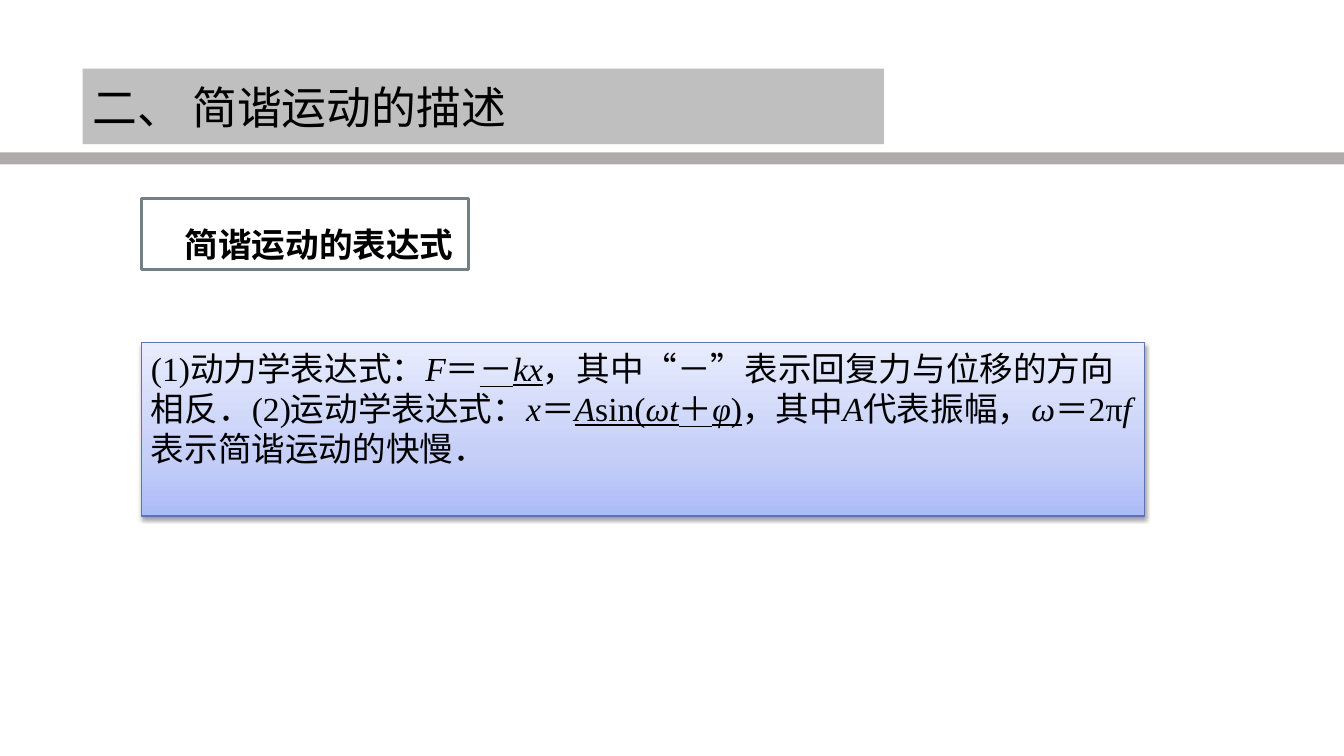
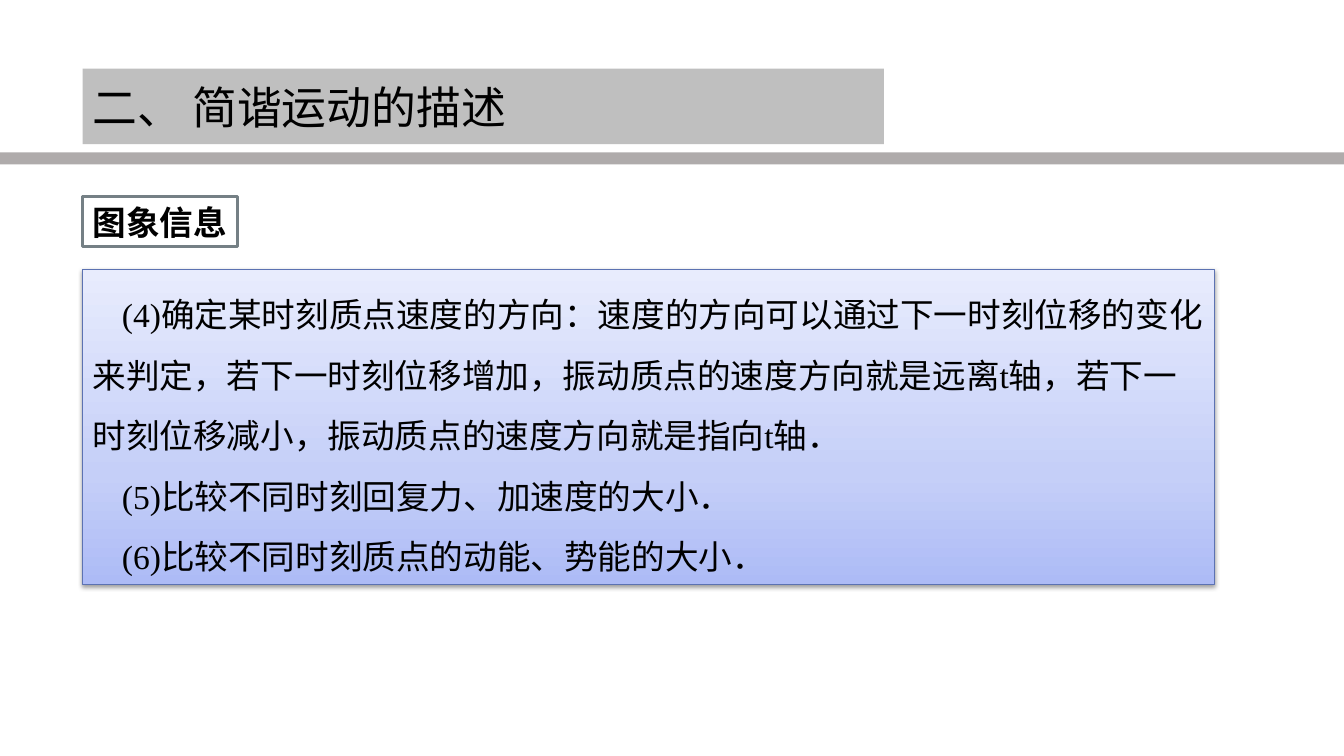
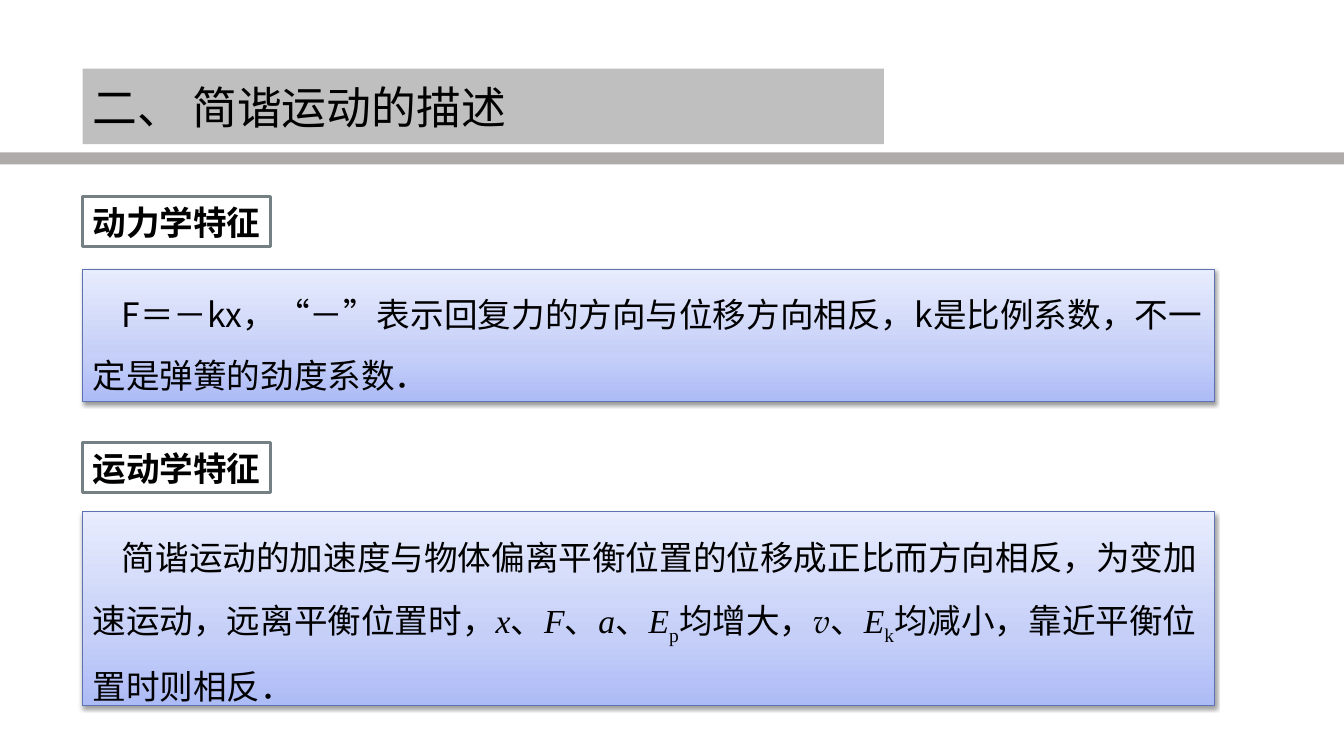
"""Build three slides on the description of simple harmonic motion."""
from dataclasses import dataclass

from pptx import Presentation
from pptx.dml.color import RGBColor
from pptx.enum.shapes import MSO_SHAPE as SHAPE
from pptx.enum.text import MSO_ANCHOR as ANCHOR, MSO_AUTO_SIZE as AUTO, PP_ALIGN as ALIGN
from pptx.oxml import parse_xml
from pptx.oxml.ns import nsdecls, qn
from pptx.util import Pt


@dataclass(frozen=True)
class Theme:
    ink: str = "000000"
    band: str = "AFABAB"
    title_fill: str = "BFBFBF"
    label_fill: str = "FFFFFF"
    label_line: str = "758085"
    panel_line: str = "5C72B2"
    panel_stops: tuple = ((0, "ADBBF6"), (35, "C5CFF8"), (100, "E8ECFD"))
    title_size: int = 32
    body_size: int = 24
    cjk: str = "Noto Sans CJK SC"
    heading: str = "Lato"
    sans: str = "Calibri"
    serif: str = "Times New Roman"
    script: str = "TeX Gyre Pagella"


T = Theme()
WIDTH, HEIGHT = 960, 540
LEFT, PANEL_WIDTH = 59, 808.6
LABEL_HEIGHT, INSET = 36, 7.2
TITLE = "二、 简谐运动的描述"
TITLE_AT = (LEFT, 49, 572.4, 54)
BAND_AT = (0, 108.8, WIDTH, 8.6)

EXPRESSIONS = [
    ("(1)动力学表达式：", ""), ("F", "i"), ("＝", ""), ("－", "u"), ("kx", "iu"),
    ("，其中“－”表示回复力与位移的方向相反．(2)运动学表达式：", ""),
    ("x", "i"), ("＝", ""), ("A", "iu"), ("sin(", "u"), ("ωt", "iu"), ("＋", "u"),
    ("φ", "iu"), (")", "u"), ("，其中", ""), ("A", "i"), ("代表振幅，", ""),
    ("ω", "i"), ("＝2π", ""), ("f", "i"), ("表示简谐运动的快慢．", ""),
]
GRAPH_FACTS = [
    "(4)确定某时刻质点速度的方向：速度的方向可以通过下一时刻位移的变化来判定，"
    "若下一时刻位移增加，振动质点的速度方向就是远离t轴，"
    "若下一时刻位移减小，振动质点的速度方向就是指向t轴．",
    "(5)比较不同时刻回复力、加速度的大小．",
    "(6)比较不同时刻质点的动能、势能的大小．",
]
DYNAMICS = "F＝－kx，“－”表示回复力的方向与位移方向相反，k是比例系数，不一定是弹簧的劲度系数．"
KINEMATICS = [
    ("简谐运动的加速度与物体偏离平衡位置的位移成正比而方向相反，为变加速运动，远离平衡位置时，", ""),
    ("x", "mi"), ("、", ""), ("F", "mi"), ("、", ""), ("a", "mi"), ("、", ""),
    ("E", "mi"), ("p", "ms"), ("均增大，", ""), ("v", "vi"), ("、", ""),
    ("E", "mi"), ("k", "ms"), ("均减小，靠近平衡位置时则相反．", ""),
]

SPACED = dict(indent=21, spacing=1.5)
SLIDES = [
    dict(
        labels=[dict(text="简谐运动的表达式", at=(100.8, 141.8, 234, 51), font=T.cjk,
                     indent=24, spacing=1.5, wrap=True)],
        panels=[dict(paras=[EXPRESSIONS], at=(100.8, 244.8, 717.1, 123.8), font=T.serif)],
    ),
    dict(
        labels=[dict(text="图象信息", top=140.4)],
        panels=[dict(paras=GRAPH_FACTS, at=(LEFT, 192.2, PANEL_WIDTH, 225.4),
                     font=T.serif, **SPACED)],
    ),
    dict(
        labels=[dict(text="动力学特征", top=140.4), dict(text="运动学特征", top=316.1)],
        panels=[
            dict(paras=[DYNAMICS], at=(LEFT, 192.2, PANEL_WIDTH, 94.6), font=T.cjk, **SPACED),
            dict(paras=[KINEMATICS], at=(LEFT, 365.6, PANEL_WIDTH, 138.2), font=T.sans, **SPACED),
        ],
    ),
]


def rgb(color):
    return RGBColor.from_string(color)


def place(sp, at):
    sp.left, sp.top, sp.width, sp.height = map(Pt, at)


def write(sp, paras, *, font, size=T.body_size, bold=False, indent=0, spacing=None,
          wrap=True, anchor=ANCHOR.TOP):
    tf = sp.text_frame
    tf.auto_size, tf.word_wrap, tf.vertical_anchor = AUTO.NONE, wrap, anchor
    faces = {"m": T.serif, "v": T.script}
    for i, para in enumerate(paras):
        p = tf.add_paragraph() if i else tf.paragraphs[0]
        p.alignment = ALIGN.LEFT
        if spacing:
            p.line_spacing = spacing
        if indent:
            p._p.get_or_add_pPr().set("indent", str(Pt(indent)))
        for text, marks in [(para, "")] if isinstance(para, str) else para:
            r = p.add_run()
            r.text = text
            f = r.font
            f.size, f.bold, f.italic, f.underline = Pt(size), bold, "i" in marks, "u" in marks
            f.color.rgb = rgb(T.ink)
            f.name = next((faces[m] for m in marks if m in faces), font)
            rpr = r._r.get_or_add_rPr()
            rpr.find(qn("a:latin")).addnext(
                parse_xml(f'<a:ea {nsdecls("a")} typeface="{T.cjk}"/>'))
            if "s" in marks:
                rpr.set("baseline", "-25000")


def add_box(s, at, fill, line=None, weight=0):
    sp = s.shapes.add_shape(SHAPE.RECTANGLE, *map(Pt, at))
    sp.shadow.inherit = False
    sp.fill.solid()
    sp.fill.fore_color.rgb = rgb(fill)
    if line:
        sp.line.color.rgb = rgb(line)
        sp.line.width = Pt(weight)
    else:
        sp.line.fill.background()
    return sp


def add_label(s, text, at=None, top=0, font=T.sans, wrap=False, **fmt):
    at = at or (LEFT, top, len(text) * T.body_size + 2 * INSET, LABEL_HEIGHT)
    sp = add_box(s, at, T.label_fill, T.label_line, 2)
    write(sp, [text], font=font, bold=True, wrap=wrap, **fmt)


def add_panel(s, paras, at, **fmt):
    sp = add_box(s, at, T.label_fill, T.panel_line, 0.75)
    stops = "".join(f'<a:gs pos="{pos * 1000}"><a:srgbClr val="{color}"/></a:gs>'
                    for pos, color in T.panel_stops)
    pr = sp._element.spPr
    pr.replace(pr.find(qn("a:solidFill")), parse_xml(
        f'<a:gradFill {nsdecls("a")} rotWithShape="1"><a:gsLst>{stops}</a:gsLst>'
        '<a:lin ang="16200000" scaled="0"/></a:gradFill>'))
    pr.find(qn("a:effectLst")).append(parse_xml(
        f'<a:outerShdw {nsdecls("a")} blurRad="{Pt(3.1)}" dist="{Pt(1.6)}" dir="5400000" '
        f'rotWithShape="0"><a:srgbClr val="{T.ink}"><a:alpha val="38000"/></a:srgbClr>'
        '</a:outerShdw>'))
    write(sp, paras, **fmt)


def add_slide(prs):
    s = prs.slides.add_slide(prs.slide_layouts[5])
    add_box(s, BAND_AT, T.band)
    title = s.shapes.title
    place(title, TITLE_AT)
    title.fill.solid()
    title.fill.fore_color.rgb = rgb(T.title_fill)
    write(title, [TITLE], font=T.heading, size=T.title_size, anchor=ANCHOR.MIDDLE)
    return s


def main():
    prs = Presentation()
    prs.slide_width, prs.slide_height = Pt(WIDTH), Pt(HEIGHT)
    for content in SLIDES:
        s = add_slide(prs)
        for label in content["labels"]:
            add_label(s, **label)
        for panel in content["panels"]:
            add_panel(s, **panel)
    prs.save("out.pptx")


if __name__ == "__main__":
    main()
